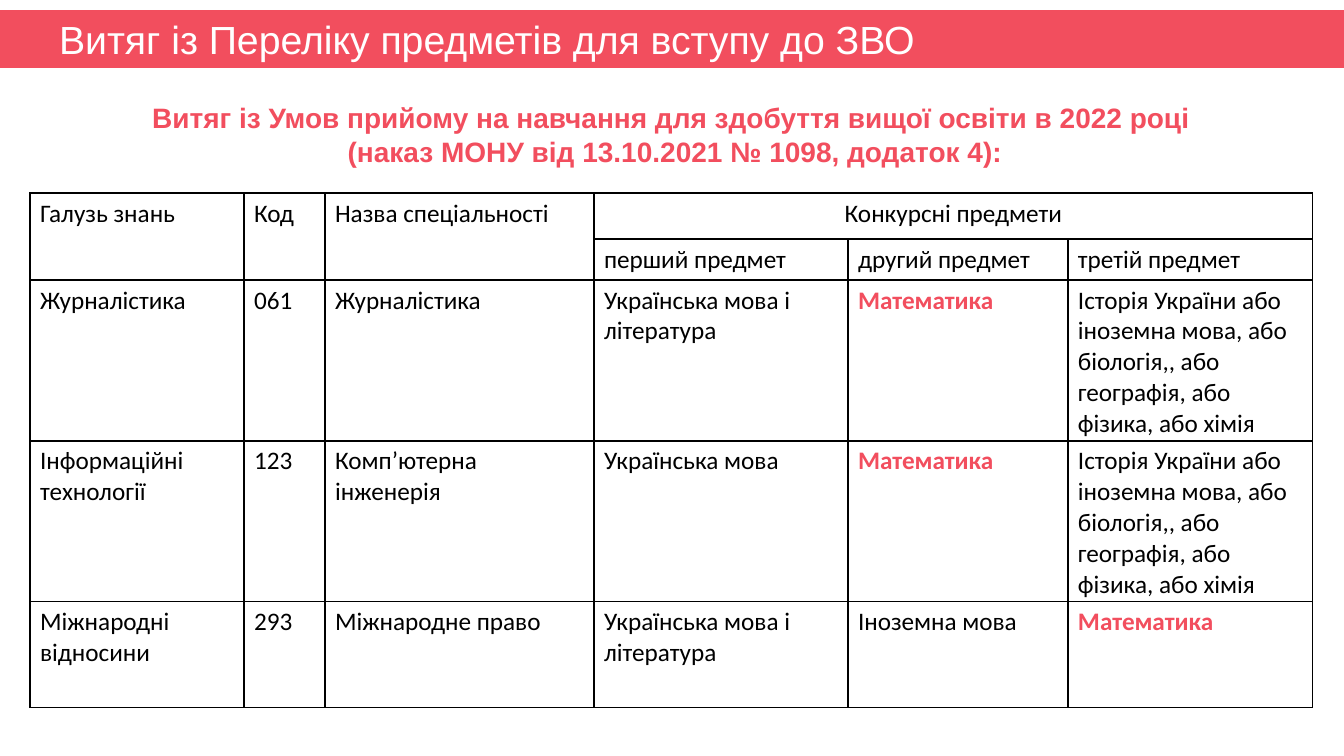
from pptx import Presentation
from pptx.dml.color import RGBColor
from pptx.enum.text import MSO_ANCHOR, PP_ALIGN
from pptx.oxml import parse_xml
from pptx.oxml.ns import nsdecls
from pptx.util import Emu, Pt

CORAL = RGBColor(0xF2, 0x4E, 0x5E)
WHITE = RGBColor(0xFF, 0xFF, 0xFF)
BLACK = RGBColor(0x00, 0x00, 0x00)


def px(length):
    return Emu(round(length * 914400 / 100.8))


def add_run(paragraph, text, font_name, size, color, bold=False):
    run = paragraph.add_run()
    run.text = text
    run.font.name = font_name
    run.font.size = Pt(size)
    run.font.color.rgb = color
    run.font.bold = bold


presentation = Presentation()
presentation.slide_width, presentation.slide_height = px(1344), px(756)
slide = presentation.slides.add_slide(presentation.slide_layouts[5])

# Title band
title = slide.shapes.title
title.left, title.top, title.width, title.height = px(0), px(10), px(1344), px(58)
title.fill.solid()
title.fill.fore_color.rgb = CORAL
title.text_frame.vertical_anchor = MSO_ANCHOR.MIDDLE
paragraph = title.text_frame.paragraphs[0]
paragraph.alignment = PP_ALIGN.LEFT
paragraph._p.get_or_add_pPr().set("marL", str(px(49)))
add_run(paragraph, "Витяг із Переліку предметів для вступу до ЗВО", "Arial", 28, WHITE)

# Subtitle
subtitle = slide.shapes.add_textbox(px(37), px(96), px(1276), px(78))
frame = subtitle.text_frame
frame.word_wrap = True
subtitle_lines = [
    "Витяг із Умов прийому на навчання для здобуття вищої освіти в 2022 році ",
    "(наказ МОНУ від 13.10.2021 № 1098, додаток 4):",
]
for index, line in enumerate(subtitle_lines):
    paragraph = frame.add_paragraph() if index else frame.paragraphs[0]
    paragraph.alignment = PP_ALIGN.CENTER
    add_run(paragraph, line, "Arial", 20, CORAL, bold=True)

# Table of subjects
MATH = "Математика"
LANGUAGE_AND_LITERATURE = "Українська мова і література"
THIRD_CHOICE = ("Історія України або іноземна мова, або біологія,, або географія, "
                "або фізика, або хімія")
rows = [
    ["Галузь знань", "Код", "Назва спеціальності", "Конкурсні предмети", "", ""],
    ["", "", "", "перший предмет", "другий предмет", "третій предмет"],
    ["Журналістика", "061", "Журналістика", LANGUAGE_AND_LITERATURE, MATH, THIRD_CHOICE],
    ["Інформаційні технології", "123", "Комп’ютерна інженерія", "Українська мова",
     MATH, THIRD_CHOICE],
    ["Міжнародні відносини", "293", "Міжнародне право", LANGUAGE_AND_LITERATURE,
     "Іноземна мова", MATH],
]
column_widths = [214, 81, 269, 254, 220, 245]
row_heights = [46, 41, 161, 161, 106]

table = slide.shapes.add_table(len(rows), len(column_widths), px(30), px(193),
                               px(sum(column_widths)), px(sum(row_heights))).table
table.first_row = table.horz_banding = False
for column, width in zip(table.columns, column_widths):
    column.width = px(width)
for row, height in zip(table.rows, row_heights):
    row.height = px(height)

for row_index, texts in enumerate(rows):
    for column_index, text in enumerate(texts):
        cell = table.cell(row_index, column_index)
        cell.margin_bottom = px(2)
        properties = cell._tc.get_or_add_tcPr()
        for side in ("lnL", "lnR", "lnT", "lnB"):
            properties.append(parse_xml(
                f'<a:{side} {nsdecls("a")} w="{Pt(1)}"><a:solidFill>'
                f'<a:srgbClr val="{BLACK}"/></a:solidFill></a:{side}>'))
        cell.fill.background()
        paragraph = cell.text_frame.paragraphs[0]
        paragraph.font.size = Pt(18)
        if text:
            is_math = text == MATH
            add_run(paragraph, text, "Calibri", 18, CORAL if is_math else BLACK, is_math)

# Merged headings
for column_index in range(3):
    table.cell(0, column_index).merge(table.cell(1, column_index))
subjects_heading = table.cell(0, 3)
subjects_heading.merge(table.cell(0, 5))
subjects_heading.text_frame.paragraphs[0].alignment = PP_ALIGN.CENTER

presentation.save("out.pptx")
